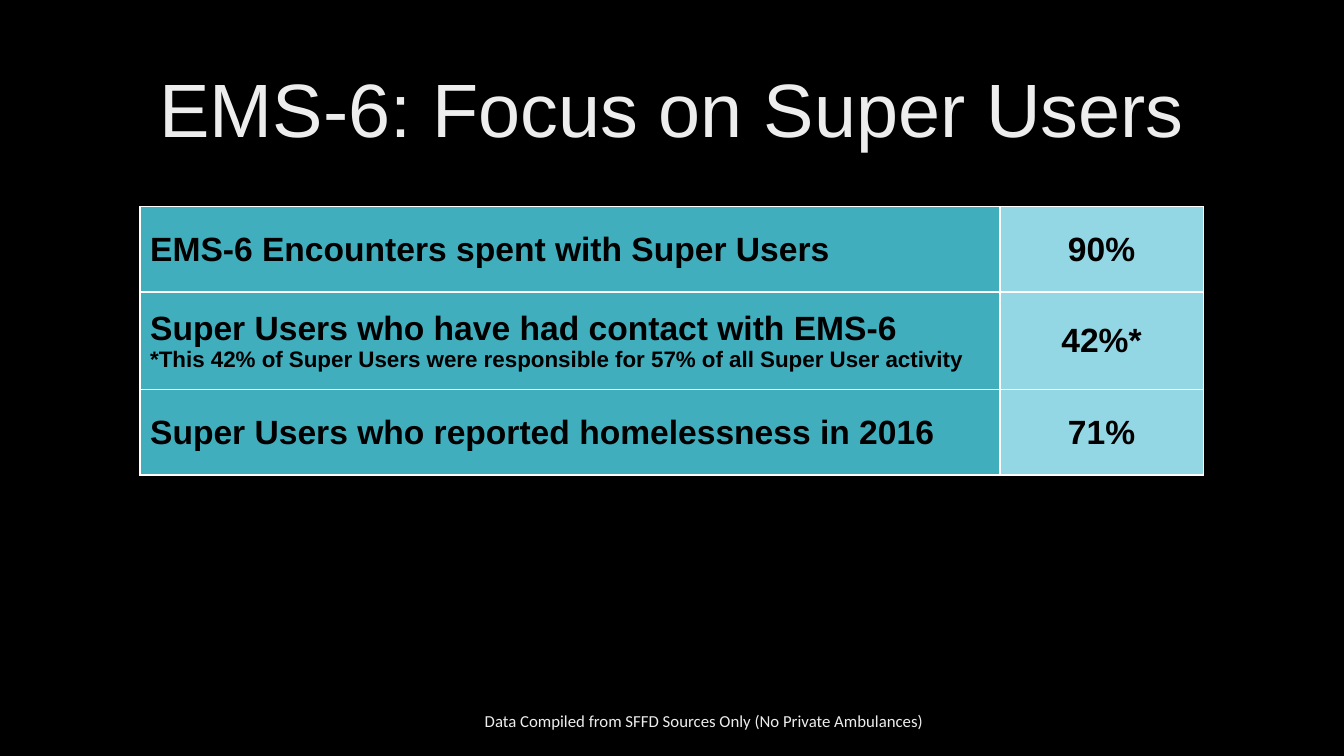
"""Build the EMS-6 slide on Super Users."""
from lxml import etree
from pptx import Presentation
from pptx.dml.color import RGBColor
from pptx.enum.text import MSO_ANCHOR, PP_ALIGN
from pptx.oxml.ns import qn
from pptx.util import Cm, Pt

COLORS = {
    "background": "000000",
    "heading": "EDEDED",
    "cell_text": "000000",
    "label": "41AEBD",
    "value": "94D7E4",
    "border": "FFFFFF",
}
ROWS = [
    ("EMS-6 Encounters spent with Super Users", "90%"),
    (
        "Super Users who have had contact with EMS-6\n"
        "*This 42% of Super Users were responsible for 57% of all Super User activity",
        "42%*",
    ),
    ("Super Users who reported homelessness in 2016", "71%"),
]
COLUMN_WIDTHS = [Cm(21.67), Cm(5.12)]
ROW_HEIGHTS = [Cm(2.15), Cm(2.46), Cm(2.15)]


def style_paragraph(para, font_name, size, color, align, bold=False):
    para.alignment = align
    for span in para.runs:
        span.font.name = font_name
        span.font.size = Pt(size)
        span.font.bold = bold
        span.font.color.rgb = RGBColor.from_string(COLORS[color])


def add_borders(cell):
    properties = cell._tc.get_or_add_tcPr()
    for index, side in enumerate(("lnL", "lnR", "lnT", "lnB")):
        line = etree.Element(qn(f"a:{side}"), w=str(Pt(1)))
        fill = etree.SubElement(line, qn("a:solidFill"))
        etree.SubElement(fill, qn("a:srgbClr"), val=COLORS["border"])
        properties.insert(index, line)


deck = Presentation()
deck.slide_width, deck.slide_height = Cm(33.87), Cm(19.05)
page = deck.slides.add_slide(deck.slide_layouts[5])
page.background.fill.solid()
page.background.fill.fore_color.rgb = RGBColor.from_string(COLORS["background"])

title = page.shapes.title
title.left, title.top, title.width, title.height = Cm(2.33), Cm(1.01), Cm(29.21), Cm(3.68)
title.text_frame.text = "EMS-6: Focus on Super Users"
title.text_frame.vertical_anchor = MSO_ANCHOR.MIDDLE
heading = title.text_frame.paragraphs[0]
heading.line_spacing = 0.9
style_paragraph(heading, "Arial", 54, "heading", PP_ALIGN.CENTER)

source_box = page.shapes.add_textbox(Cm(11.23), Cm(17.65), Cm(13.03), Cm(1.02))
source_box.text_frame.word_wrap = True
source_box.text_frame.text = "Data Compiled from SFFD Sources Only (No Private Ambulances)"
source_box.text_frame.vertical_anchor = MSO_ANCHOR.MIDDLE
style_paragraph(source_box.text_frame.paragraphs[0], "Calibri", 12, "heading", PP_ALIGN.CENTER)

table = page.shapes.add_table(
    len(ROWS), len(COLUMN_WIDTHS), Cm(3.53), Cm(5.21), sum(COLUMN_WIDTHS), sum(ROW_HEIGHTS)
).table
table.first_row = False
table.horz_banding = False
for column, width in zip(table.columns, COLUMN_WIDTHS):
    column.width = width
for row, height, texts in zip(table.rows, ROW_HEIGHTS, ROWS):
    row.height = height
    for cell, text, fill, align in zip(
        row.cells, texts, ("label", "value"), (PP_ALIGN.LEFT, PP_ALIGN.CENTER)
    ):
        cell.text_frame.text = text
        cell.vertical_anchor = MSO_ANCHOR.MIDDLE
        cell.fill.solid()
        cell.fill.fore_color.rgb = RGBColor.from_string(COLORS[fill])
        add_borders(cell)
        for para in cell.text_frame.paragraphs:
            size = 16 if para.text.startswith("*") else 24
            style_paragraph(para, "Arial", size, "cell_text", align, bold=True)

deck.save("out.pptx")
